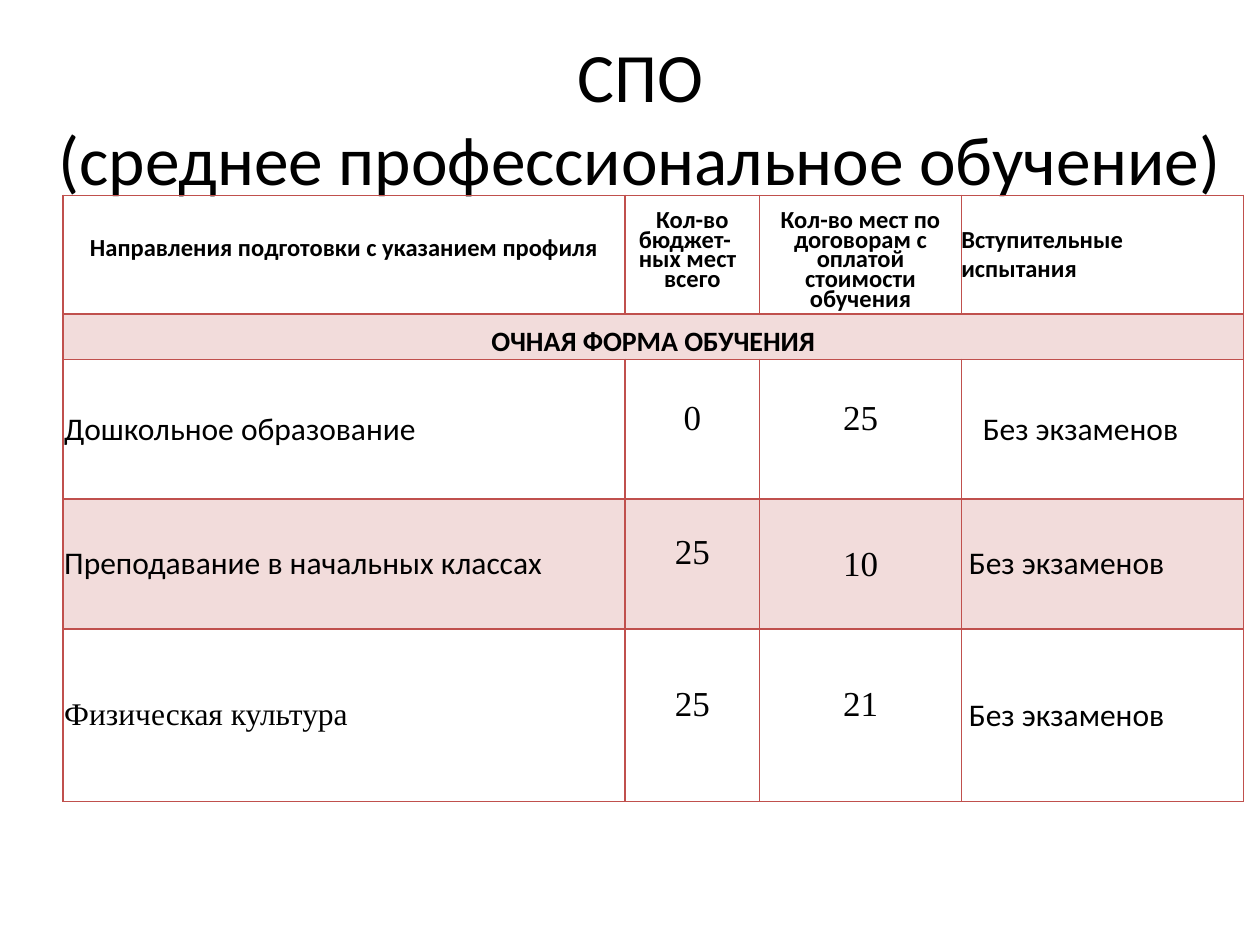
from dataclasses import dataclass

from pptx import Presentation
from pptx.dml.color import RGBColor as Rgb
from pptx.enum.text import MSO_ANCHOR as Anchor, PP_ALIGN as Align
from pptx.util import Inches, Pt


@dataclass(frozen=True)
class Theme:
    ink: Rgb = Rgb(0, 0, 0)
    band: Rgb = Rgb(0xF2, 0xDC, 0xDB)
    sans: str = "Calibri"
    serif: str = "Times New Roman"
    title: float = 39.6
    head: float = 14
    form: float = 16
    body: float = 18
    count: float = 20
    # Built-in "Light Style 3 - Accent 2": red grid, thick line below the header
    grid: str = "{5DA37D80-6434-44D0-A028-1B22A696006F}"


T = Theme()
COLS = (4.46, 1.07, 1.6, 2.24)
ROWS = (0.91, 0.36, 1.11, 1.03, 1.37)
TIGHT, SNUG = Pt(9.5), Pt(11.3)


def style(para, size, name=T.sans, bold=False, align=None, gap=None, indent=0):
    para.alignment = align
    if gap:
        para.line_spacing = gap
    if indent:
        para._p.get_or_add_pPr().set("marL", str(Inches(indent)))
    for run in para.runs:
        for key, value in {"size": Pt(size), "name": name, "bold": bold}.items():
            setattr(run.font, key, value)
        run.font.color.rgb = T.ink


def add_title(slide, text):
    box = slide.shapes.add_textbox(Inches(0.28), Inches(0.3), Inches(9.6), Inches(1.25))
    frame = box.text_frame
    frame.word_wrap = True
    frame.vertical_anchor = Anchor.MIDDLE
    frame.text = text
    style(frame.paragraphs[0], T.title, align=Align.CENTER)


def add_grid(slide):
    frame = slide.shapes.add_table(len(ROWS), len(COLS), Inches(0.5), Inches(1.55),
                                   Inches(sum(COLS)), Inches(sum(ROWS)))
    table = frame.table
    table._tbl.tblPr[0].text = T.grid
    for col, width in zip(table.columns, COLS):
        col.width = Inches(width)
    for row, height in zip(table.rows, ROWS):
        row.height = Inches(height)
    for r in range(len(ROWS)):
        for c in range(len(COLS)):
            cell = table.cell(r, c)
            side = Inches(0.01 if c < 3 else 0)
            for key, value in {"margin_left": side, "margin_right": side,
                               "margin_top": 0, "margin_bottom": 0,
                               "vertical_anchor": Anchor.MIDDLE}.items():
                setattr(cell, key, value)
            if r % 2:
                cell.fill.solid()
                cell.fill.fore_color.rgb = T.band
            else:
                cell.fill.background()
    return table


def put(cell, text, size, **look):
    cell.text = text
    for para in cell.text_frame.paragraphs:
        style(para, size, **look)


def fill_head(table):
    mid = {"bold": True, "align": Align.CENTER}
    put(table.cell(0, 0), "Направления подготовки с указанием профиля",
        T.head, gap=TIGHT, **mid)
    places = table.cell(0, 1)
    put(places, "Кол-во\nбюджет-ных мест\nвсего", T.head, gap=SNUG, **mid)
    style(places.text_frame.paragraphs[1], T.head, bold=True, gap=SNUG, indent=0.1)
    paid = table.cell(0, 2)
    put(paid, "Кол-во мест по договорам с оплатой стоимости обучения",
        T.head, gap=SNUG, **mid)
    paid.vertical_anchor = Anchor.TOP
    paid.margin_top = SNUG
    put(table.cell(0, 3), "Вступительные\nиспытания", T.head, bold=True)

    form = table.cell(1, 0)
    form.merge(table.cell(1, 3))
    form.vertical_anchor = Anchor.BOTTOM
    put(form, "ОЧНАЯ ФОРМА ОБУЧЕНИЯ", T.form, **mid)


def fill_row(table, r, course, free, paid, font=T.sans, gap=TIGHT, indent=0.06):
    put(table.cell(r, 0), course, T.body, name=font)
    num = {"name": T.serif, "align": Align.CENTER}
    put(table.cell(r, 1), free, T.count, gap=TIGHT, **num)
    put(table.cell(r, 2), paid, T.count, gap=gap, **num)
    put(table.cell(r, 3), "Без экзаменов", T.body, indent=indent)


def main():
    deck = Presentation()
    deck.slide_width, deck.slide_height = Inches(10), Inches(7.5)
    slide = deck.slides.add_slide(deck.slide_layouts[6])
    add_title(slide, "СПО\v(среднее профессиональное обучение)")
    table = add_grid(slide)
    fill_head(table)
    fill_row(table, 2, "Дошкольное образование", "0", "25", indent=0.17)
    fill_row(table, 3, "Преподавание в начальных классах", "25", "10", gap=None)
    fill_row(table, 4, "Физическая культура", "25", "21", font=T.serif)
    deck.save("out.pptx")


if __name__ == "__main__":
    main()
